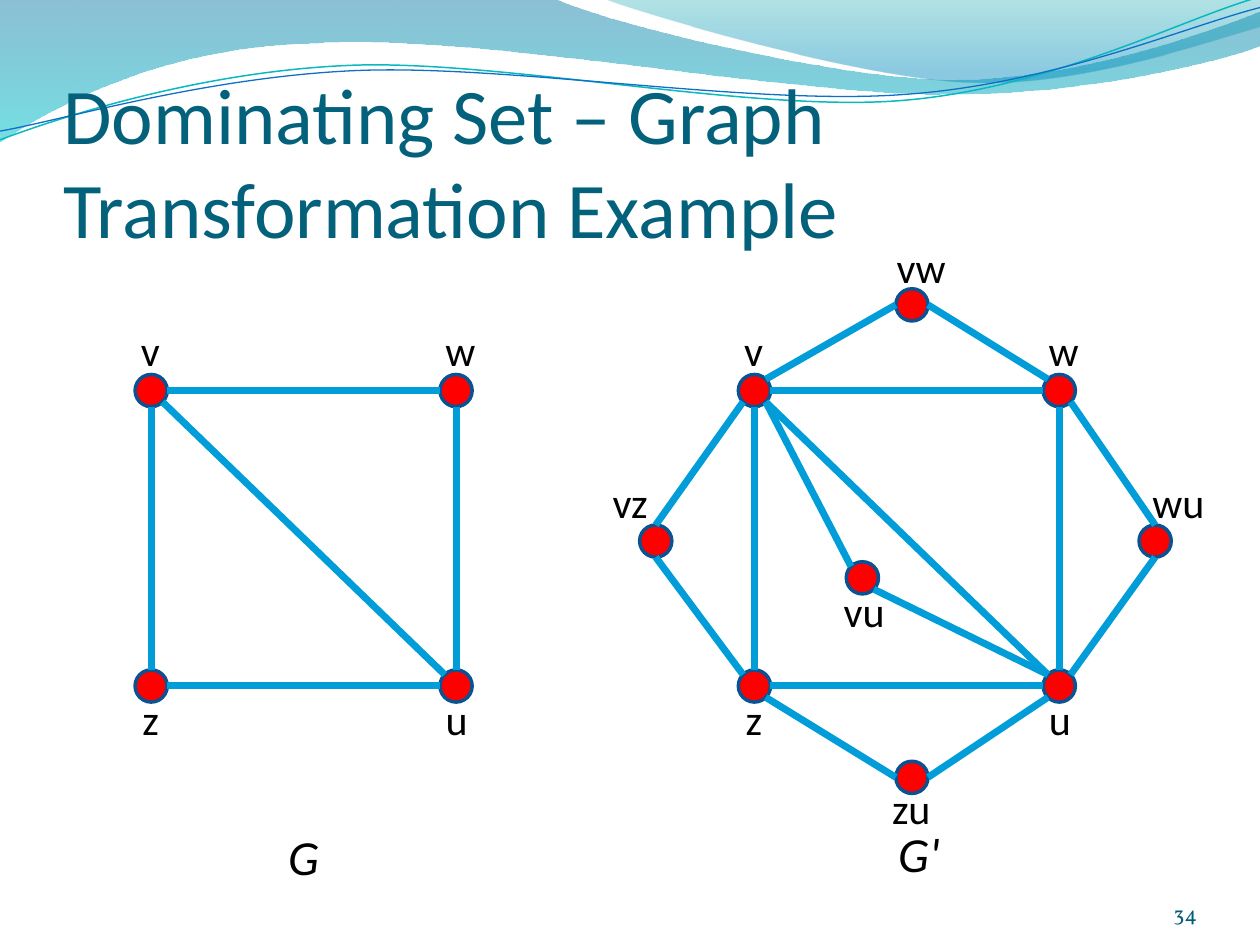
from lxml import etree
from pptx import Presentation, util as u
from pptx.dml import color
from pptx.enum import shapes, text
from pptx.oxml import ns

INK, RED, RIM, EDGE = "000000", "FF0000", "0B5292", "009DD9"
RAD, DIAG = 9.2, 6.5
SITES = {
    "n": (0, -RAD), "s": (0, RAD), "w": (-RAD, 0), "e": (RAD, 0),
    "nw": (-DIAG, -DIAG), "ne": (DIAG, -DIAG),
    "sw": (-DIAG, DIAG), "se": (DIAG, DIAG),
}
WIDE, TALL = 174.2, 168.8

CORE = {
    "v": (0, 0, -0.4, -22.7, 25),
    "w": (WIDE, 0, 2.5, -22.7, 32),
    "z": (0, TALL, -0.3, 19.2, 25),
    "u": (WIDE, TALL, 0.4, 19.2, 27),
}
EXTRA = {
    "vz": (-56.4, 86, -14.6, -22, 35),
    "wu": (229, 86, 13.3, -22, 45),
    "zu": (90, 221, -0.4, 17.6, 37),
    "vw": (90, -49, 5.3, -21.6, 43),
    "vu": (61.7, 107, 1, 19.1, 38),
}
CORE_EDGES = ["v e w w", "v s z n", "z e u w", "u n w s", "v se u nw"]
EXTRA_EDGES = [
    "vw w v ne", "vw e w nw", "vz s z nw", "vz n v sw", "w se wu n",
    "wu s u ne", "z se zu w", "zu e u sw", "vu nw v se", "vu se u nw",
]

BAND = [
    (0, 0), (317, -0.7), (343, 12.2, 478, 45.4, 546, 45.4),
    (614, 45.4, 690, 18.7, 720, 6.5), (720.7, 26),
    (708, 31.7, 626, 54.7, 537, 54), (448, 54, 275, 20.2, 185, 24.5),
    (92.9, 25.9, 33, 59.8, -0.7, 81.4),
]
CREST = [
    (344.9, -0.7), (366.5, 7.9, 491, 44.6, 553.7, 46.8),
    (616, 49.7, 692, 23, 720, 15.1), (720, 0),
]
TEAL = [
    (0, 79.9), (34.6, 67, 113.8, 41, 199.4, 37.4),
    (284.4, 33.8, 427, 64.1, 513.4, 57.6),
    (599.8, 51.1, 675.4, 10.8, 718.6, -1.4),
]
BLUE = [
    (0, 74.9), (33.8, 69.1, 118, 43.9, 203.8, 40.3),
    (290.2, 36.7, 429.8, 60.5, 516.2, 54),
    (601.9, 48.2, 677.5, 15.1, 720, 4.3),
]


def rgb(code):
    return color.RGBColor.from_string(code)


def curve(slide, left, top, steps, closed):
    dots = [(u.Pt(left + x), u.Pt(top + y))
            for step in steps for x, y in zip(step[::2], step[1::2])]
    pen = slide.shapes.build_freeform(*dots[0])
    pen.add_line_segments(dots[1:], close=closed)
    shape = pen.convert_to_shape()
    shape.shadow.inherit = False
    lines = iter(list(shape._element.iter(ns.qn("a:lnTo"))))
    for step in steps[1:]:
        first = next(lines)
        if len(step) == 6:
            first.tag = ns.qn("a:cubicBezTo")
            for line in (next(lines), next(lines)):
                first.append(line[0])
                line.getparent().remove(line)
    return shape


def waves(slide, left, top):
    for steps, stops in (
        (BAND, [("0074A1", 0, 45), ("00C6CF", 1, 55)]),
        (CREST, [("00A1A9", 0, 30), ("008BBF", 0.8, 45)]),
    ):
        shape = curve(slide, left, top, steps, True)
        shape.line.fill.background()
        shape.fill.gradient()
        shape.fill.gradient_angle = 270
        for stop, (code, place, _) in zip(shape.fill.gradient_stops, stops):
            stop.color.rgb = rgb(code)
            stop.position = place
        tints = shape._element.spPr.iter(ns.qn("a:srgbClr"))
        for tint, (_, _, alpha) in zip(tints, stops):
            etree.SubElement(tint, ns.qn("a:alpha")).set("val", str(alpha * 1000))
    for steps, code, width in ((TEAL, "0AB8BF", 0.85), (BLUE, "0F6FC6", 0.75)):
        shape = curve(slide, left, top, steps, False)
        shape.fill.background()
        shape.line.color.rgb = rgb(code)
        shape.line.width = u.Pt(width)


def write(slide, box, words, size, code=INK, font="Calibri", align="CENTER",
          anchor="TOP", inset=(7.2, 3.6, 7.2, 3.6), wrap=False, slant=False):
    frame = slide.shapes.add_textbox(*map(u.Pt, box)).text_frame
    frame.word_wrap = wrap
    frame.vertical_anchor = text.MSO_ANCHOR[anchor]
    (frame.margin_left, frame.margin_top,
     frame.margin_right, frame.margin_bottom) = map(u.Pt, inset)
    para = frame.paragraphs[0]
    para.text = words
    para.alignment = text.PP_ALIGN[align]
    para.font.name = font
    para.font.size = u.Pt(size)
    para.font.italic = slant
    para.font.color.rgb = rgb(code)


def node(slide, x, y):
    dot = slide.shapes.add_shape(
        shapes.MSO_SHAPE.OVAL, *map(u.Pt, (x - RAD, y - RAD, 2 * RAD, 2 * RAD)))
    dot.shadow.inherit = False
    dot.fill.solid()
    dot.fill.fore_color.rgb = rgb(RED)
    dot.line.color.rgb = rgb(RIM)
    dot.line.width = u.Pt(2)


def edge(slide, start, end):
    line = slide.shapes.add_connector(
        shapes.MSO_CONNECTOR.STRAIGHT, *map(u.Pt, start + end))
    line.line.color.rgb = rgb(EDGE)
    line.line.width = u.Pt(4)
    etree.SubElement(line._element.spPr, ns.qn("a:effectLst"))


def graph(slide, left, top, nodes, edges, name, spot):
    def site(key, side):
        dx, dy = SITES[side]
        return left + nodes[key][0] + dx, top + nodes[key][1] + dy

    for x, y, *_ in nodes.values():
        node(slide, left + x, top + y)
    for link in edges:
        a, out, b, into = link.split()
        edge(slide, site(a, out), site(b, into))
    for key, (x, y, dx, dy, wide) in nodes.items():
        box = (left + x + dx - wide / 2, top + y + dy - 18.4, wide, 36.7)
        write(slide, box, key, 24)
    x, y, wide = spot
    write(slide, (left + x, top + y, wide, 41), name, 28, slant=True)


def main():
    deck = Presentation()
    deck.slide_width, deck.slide_height = u.Pt(720), u.Pt(540)
    slide = deck.slides.add_slide(deck.slide_layouts[6])
    waves(slide, 0, 0)
    write(slide, (36.2, 55.4, 648, 90), "Dominating Set – Graph Transformation Example",
          45, "04617B", align="LEFT", anchor="BOTTOM", inset=(0, 3.6, 0, 0), wrap=True)
    graph(slide, 86.4, 223.2, CORE, CORE_EDGES, "G", (70.9, 245.5, 32.4))
    graph(slide, 431.1, 223.2, {**CORE, **EXTRA}, CORE_EDGES + EXTRA_EDGES,
          "G'", (75, 243.6, 38.2))
    write(slide, (624, 500.4, 60, 28.8), "34", 12, "045D75", "Vollkorn",
          "RIGHT", "BOTTOM", (0, 0, 0, 0), True)
    deck.save("out.pptx")


if __name__ == "__main__":
    main()
